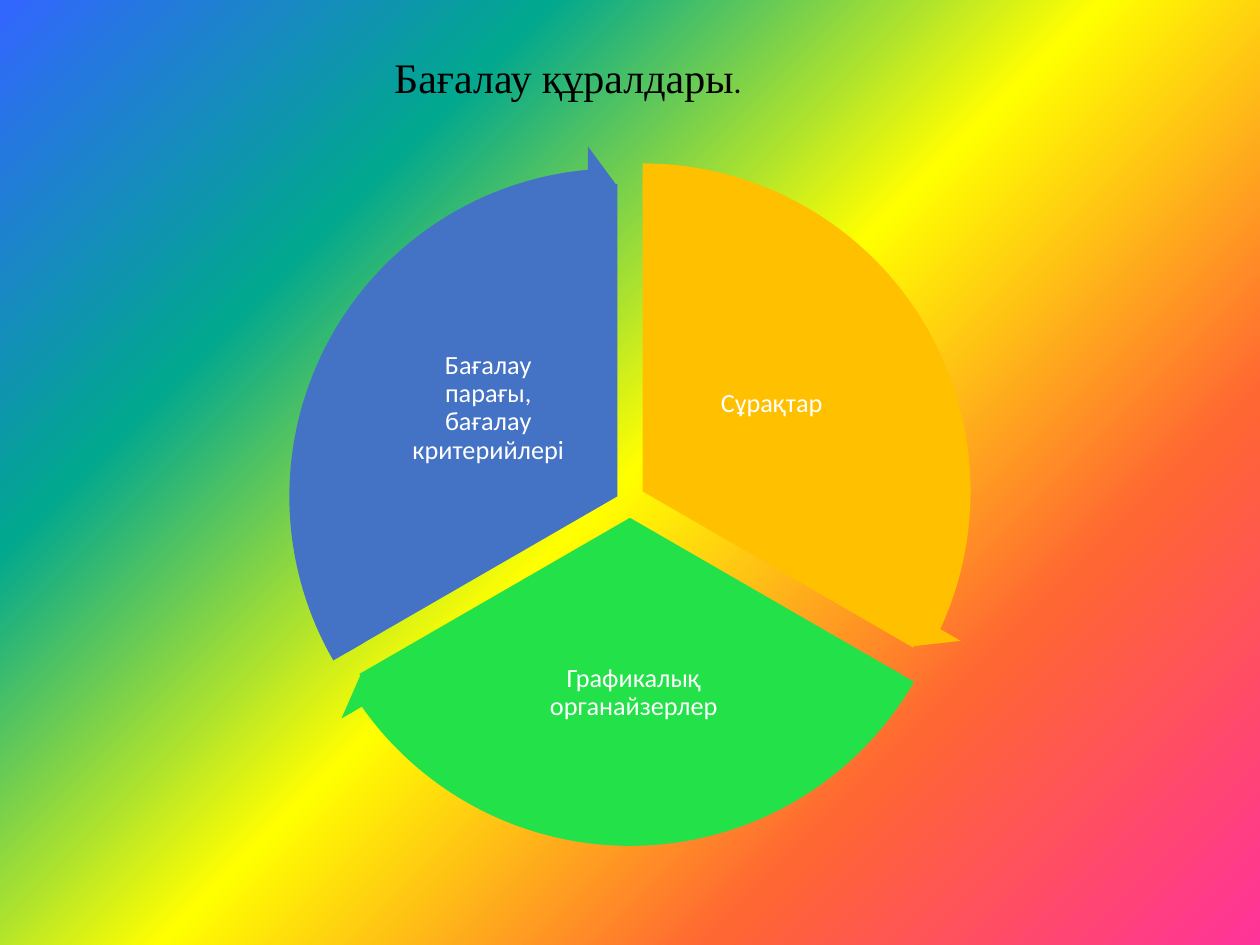
from dataclasses import dataclass

from lxml import etree
from pptx import Presentation
from pptx.dml.color import RGBColor
from pptx.enum import shapes, text
from pptx.oxml.ns import qn
from pptx.util import Inches, Pt


@dataclass(frozen=True)
class Theme:
    black: str = "000000"
    white: str = "FFFFFF"
    orange: str = "FFC000"
    green: str = "23E148"
    blue: str = "4472C4"
    rainbow: tuple = ("FF3399", "FF6633", "FFFF00", "01A78F", "3366FF")
    title_font: str = "Times New Roman"
    body_font: str = "Calibri"
    title_size: int = 24
    stop_size: int = 18
    label_size: int = 15


@dataclass(frozen=True)
class Sector:
    label: str
    color: str
    center: tuple[float, float]
    start: float  # degrees, clockwise from the right
    box: tuple[float, float, float, float]


THEME = Theme()
PIE_SIZE, ARROW_SIZE = 4.96, 5.58
SWEEP = 120
DEGREE = 0.6  # adjustment units in one degree
HEAD = 3.275  # arrowhead angle in adjustment units
BAND, HEAD_WIDTH = 0.051, 0.059

SECTORS = [
    Sector("Сұрақтар", THEME.orange, (5.10, 3.90), 270, (5.5, 2.69, 1.25, 1.04)),
    Sector("Графикалық органайзерлер", THEME.green, (5.00, 4.11), 30,
           (4.09, 5.04, 1.88, 0.92)),
    Sector("Бағалау парағы, бағалау критерийлері", THEME.blue, (4.90, 3.94), 150,
           (3.25, 2.72, 1.25, 1.04)),
]


def paint_background(slide) -> None:
    """Rainbow gradient spreading from the bottom right corner."""
    slide.background.fill.gradient()
    grad = slide.element.xpath(".//p:bgPr/a:gradFill")[0]
    for child in list(grad):
        grad.remove(child)
    stops = etree.SubElement(grad, qn("a:gsLst"))
    for i, color in enumerate(THEME.rainbow):
        gs = etree.SubElement(stops, qn("a:gs"), pos=str(i * 25000))
        etree.SubElement(gs, qn("a:srgbClr"), val=color)
    path = etree.SubElement(grad, qn("a:path"), path="circle")
    etree.SubElement(path, qn("a:fillToRect"), l="100000", t="100000")
    etree.SubElement(grad, qn("a:tileRect"), r="-100000", b="-100000")


def style_font(font, name: str, size: int, color: str) -> None:
    font.name, font.size = name, Pt(size)
    font.color.rgb = RGBColor.from_string(color)


def add_title(slide) -> None:
    sp = slide.shapes.add_textbox(Inches(3.03), Inches(0.36), Inches(2.99), Inches(0.5))
    tf = sp.text_frame
    tf.word_wrap = False
    tf.auto_size = text.MSO_AUTO_SIZE.SHAPE_TO_FIT_TEXT
    p = tf.paragraphs[0]
    for words, name, size in (
        ("Бағалау құралдары", THEME.title_font, THEME.title_size),
        (".", THEME.body_font, THEME.stop_size),
    ):
        r = p.add_run()
        r.text = words
        style_font(r.font, name, size, THEME.black)


def add_round(group, kind, sector: Sector, size: float, adjustments: list[float]) -> None:
    """Draw a filled round preset about the centre of its sector."""
    x, y = sector.center
    sp = group.shapes.add_shape(kind, Inches(x - size / 2), Inches(y - size / 2),
                                Inches(size), Inches(size))
    sp.shadow.inherit = False
    sp.fill.solid()
    sp.fill.fore_color.rgb = RGBColor.from_string(sector.color)
    sp.line.fill.background()
    for i, value in enumerate(adjustments):
        sp.adjustments[i] = value


def add_label(group, sector: Sector) -> None:
    sp = group.shapes.add_textbox(*(Inches(v) for v in sector.box))
    tf = sp.text_frame
    tf.word_wrap = True
    tf.vertical_anchor = text.MSO_ANCHOR.MIDDLE
    tf.margin_left = tf.margin_right = tf.margin_top = tf.margin_bottom = Inches(0.02)
    p = tf.paragraphs[0]
    p.text = sector.label
    p.alignment = text.PP_ALIGN.CENTER
    p.line_spacing = 0.9
    style_font(p.font, THEME.body_font, THEME.label_size, THEME.white)


def add_cycle(slide) -> None:
    group = slide.shapes.add_group_shape()
    angles = [(s.start * DEGREE, (s.start + SWEEP) % 360 * DEGREE) for s in SECTORS]
    # Sectors with their labels
    for sector, (start, end) in zip(SECTORS, angles):
        add_round(group, shapes.MSO_SHAPE.PIE, sector, PIE_SIZE, [start, end])
        add_label(group, sector)
    # Arrows along the rim
    for sector, (start, end) in zip(SECTORS, angles):
        add_round(group, shapes.MSO_SHAPE.CIRCULAR_ARROW, sector, ARROW_SIZE,
                  [BAND, HEAD, end - HEAD, start, HEAD_WIDTH])


def main() -> None:
    prs = Presentation()
    prs.slide_width, prs.slide_height = Inches(10), Inches(7.5)
    slide = prs.slides.add_slide(prs.slide_layouts[6])
    paint_background(slide)
    add_title(slide)
    add_cycle(slide)
    prs.save("out.pptx")


if __name__ == "__main__":
    main()
